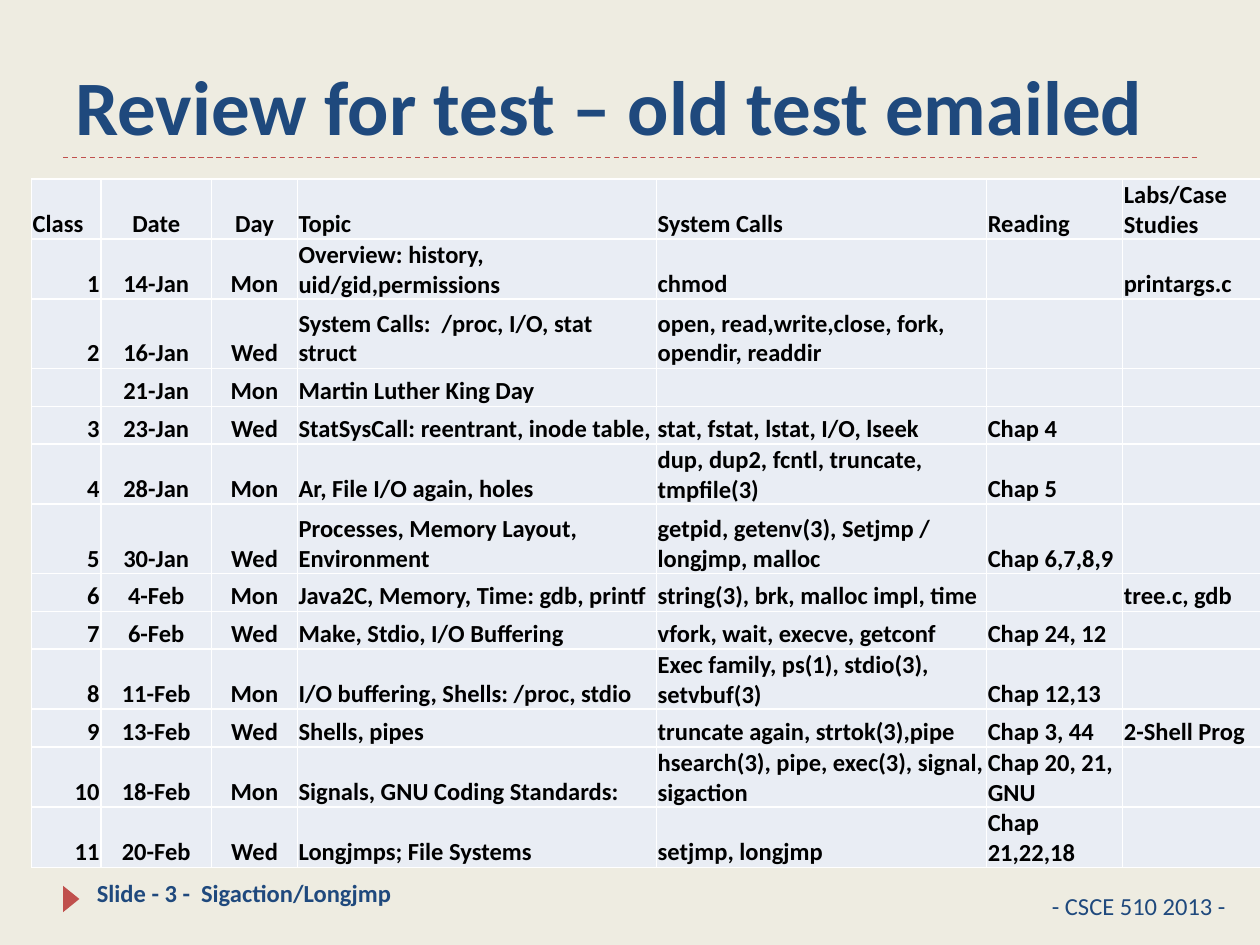
import pptx
import pptx.dml.color
import pptx.enum.dml
import pptx.enum.shapes
import pptx.enum.text
import pptx.oxml
import pptx.oxml.ns
import pptx.util

Pt = pptx.util.Pt
RGBColor = pptx.dml.color.RGBColor
ALIGN = pptx.enum.text.PP_ALIGN
ANCHOR = pptx.enum.text.MSO_ANCHOR

FONT = "Calibri"
CREAM = RGBColor(0xEE, 0xEC, 0xE1)
NAVY = RGBColor(0x1F, 0x49, 0x7D)
RED = RGBColor(0xC0, 0x50, 0x4D)
PALE = RGBColor(0xE9, 0xED, 0xF4)
WHITE = RGBColor(0xFF, 0xFF, 0xFF)
BLACK = RGBColor(0, 0, 0)

COL_WIDTHS = [39.6, 63.36, 48.96, 205.2, 188.64, 77.76, 97.92]
ROW_HEIGHT = 21.6
TALL_ROWS = {2: 39.6, 6: 39.6, 11: 32.4}

HEADER = ["Class", "Date", "Day", "Topic", "System Calls", "Reading",
          "Labs/Case Studies"]
SCHEDULE = [
    ["1", "14-Jan", "Mon", "Overview: history, uid/gid,permissions",
     "chmod", "", "printargs.c"],
    ["2", "16-Jan", "Wed", "System Calls:  /proc, I/O, stat struct",
     "open, read,write,close, fork, opendir, readdir", "", ""],
    ["", "21-Jan", "Mon", "Martin Luther King Day", "", "", ""],
    ["3", "23-Jan", "Wed", "StatSysCall: reentrant, inode table,",
     "stat, fstat, lstat, I/O, lseek", "Chap 4", ""],
    ["4", "28-Jan", "Mon", "Ar, File I/O again, holes",
     "dup, dup2, fcntl, truncate, tmpfile(3)", "Chap 5", ""],
    ["5", "30-Jan", "Wed", "Processes, Memory Layout,  Environment",
     "getpid, getenv(3), Setjmp / longjmp, malloc", "Chap 6,7,8,9", ""],
    ["6", "4-Feb", "Mon", "Java2C, Memory, Time: gdb, printf",
     "string(3), brk, malloc impl, time", "", "tree.c, gdb"],
    ["7", "6-Feb", "Wed", "Make, Stdio, I/O Buffering",
     "vfork, wait, execve, getconf", "Chap 24, 12", ""],
    ["8", "11-Feb", "Mon", "I/O buffering, Shells: /proc, stdio",
     "Exec family, ps(1), stdio(3), setvbuf(3)", "Chap 12,13", ""],
    ["9", "13-Feb", "Wed", "Shells, pipes",
     "truncate again, strtok(3),pipe", "Chap 3, 44", "2-Shell Prog"],
    ["10", "18-Feb", "Mon", "Signals, GNU Coding Standards:",
     "hsearch(3), pipe, exec(3), signal, sigaction", "Chap 20, 21, GNU", ""],
    ["11", "20-Feb", "Wed", "Longjmps; File Systems",
     "setjmp, longjmp", "Chap 21,22,18", ""],
]


def style_paragraph(p, size, color, bold, align=ALIGN.LEFT):
    p.alignment = align
    p.font.name = FONT
    p.font.size = Pt(size)
    p.font.bold = bold
    p.font.color.rgb = color


def add_text(s, text, left, top, width, height, size, bold=False,
             anchor=ANCHOR.TOP):
    sp = s.shapes.add_textbox(Pt(left), Pt(top), Pt(width), Pt(height))
    tf = sp.text_frame
    tf.word_wrap = True
    tf.vertical_anchor = anchor
    tf.text = text
    style_paragraph(tf.paragraphs[0], size, NAVY, bold)


def add_dashed_rule(s, left, right, y):
    line = s.shapes.add_connector(pptx.enum.shapes.MSO_CONNECTOR.STRAIGHT,
                                  Pt(left), Pt(y), Pt(right), Pt(y))
    line.line.color.rgb = RED
    line.line.width = Pt(0.75)
    line.line.dash_style = pptx.enum.dml.MSO_LINE.DASH
    effects = pptx.oxml.parse_xml(
        "<a:effectLst %s/>" % pptx.oxml.ns.nsdecls("a"))
    line._element.spPr.append(effects)


def add_marker(s, left, top, width, height):
    sp = s.shapes.add_shape(
        pptx.enum.shapes.MSO_SHAPE.ISOSCELES_TRIANGLE,
        Pt(left), Pt(top), Pt(width), Pt(height))
    sp.rotation = 90
    sp.shadow.inherit = False
    sp.fill.solid()
    sp.fill.fore_color.rgb = RED
    sp.line.fill.background()


def add_borders(cell, color, width):
    tcPr = cell._tc.get_or_add_tcPr()
    for side in ("lnL", "lnR", "lnT", "lnB"):
        tcPr.append(pptx.oxml.parse_xml(
            f'<a:{side} {pptx.oxml.ns.nsdecls("a")} w="{Pt(width)}">'
            f'<a:solidFill><a:srgbClr val="{color}"/></a:solidFill>'
            f'</a:{side}>'))


def fill_cell(cell, text, align):
    cell.margin_left = cell.margin_right = cell.margin_top = Pt(0.72)
    cell.margin_bottom = 0
    cell.vertical_anchor = ANCHOR.BOTTOM
    cell.text = text
    style_paragraph(cell.text_frame.paragraphs[0], 14, BLACK, True, align)
    add_borders(cell, WHITE, 1)
    cell.fill.solid()
    cell.fill.fore_color.rgb = PALE


def add_schedule(s, left, top):
    rows = [HEADER] + SCHEDULE
    heights = [TALL_ROWS.get(i, ROW_HEIGHT) for i in range(len(rows))]
    table = s.shapes.add_table(
        len(rows), len(HEADER), Pt(left), Pt(top),
        Pt(sum(COL_WIDTHS)), Pt(sum(heights))).table
    table.first_row = False
    table.horz_banding = False
    for column, width in zip(table.columns, COL_WIDTHS):
        column.width = Pt(width)
    for i, (row, height) in enumerate(zip(rows, heights)):
        table.rows[i].height = Pt(height)
        # Class numbers sit right, dates and days are centred
        number_align = ALIGN.RIGHT if i else ALIGN.LEFT
        aligns = [number_align] + [ALIGN.CENTER] * 2 + [ALIGN.LEFT] * 4
        for j, (text, align) in enumerate(zip(row, aligns)):
            fill_cell(table.cell(i, j), text, align)


def main():
    prs = pptx.Presentation()
    prs.slide_width, prs.slide_height = Pt(720), Pt(540)
    s = prs.slides.add_slide(prs.slide_layouts[6])
    s.background.fill.solid()
    s.background.fill.fore_color.rgb = CREAM

    # Rule and footer marker
    add_dashed_rule(s, 36, 684, 90)
    add_marker(s, 33.12, 509.04, 15.12, 9.36)

    # Title and footers
    add_text(s, "Review for test – old test emailed", 36, 12.24, 648, 77.76,
             44, True, ANCHOR.BOTTOM)
    add_text(s, "- CSCE 510 2013 -", 594, 505.44, 120.24, 28.8, 14)
    add_text(s, "Slide - 3 -  Sigaction/Longjmp", 48.24, 498.24, 210.24, 28.8,
             14, True)

    # Class schedule
    add_schedule(s, 18, 102.24)

    prs.save("out.pptx")


if __name__ == "__main__":
    main()
